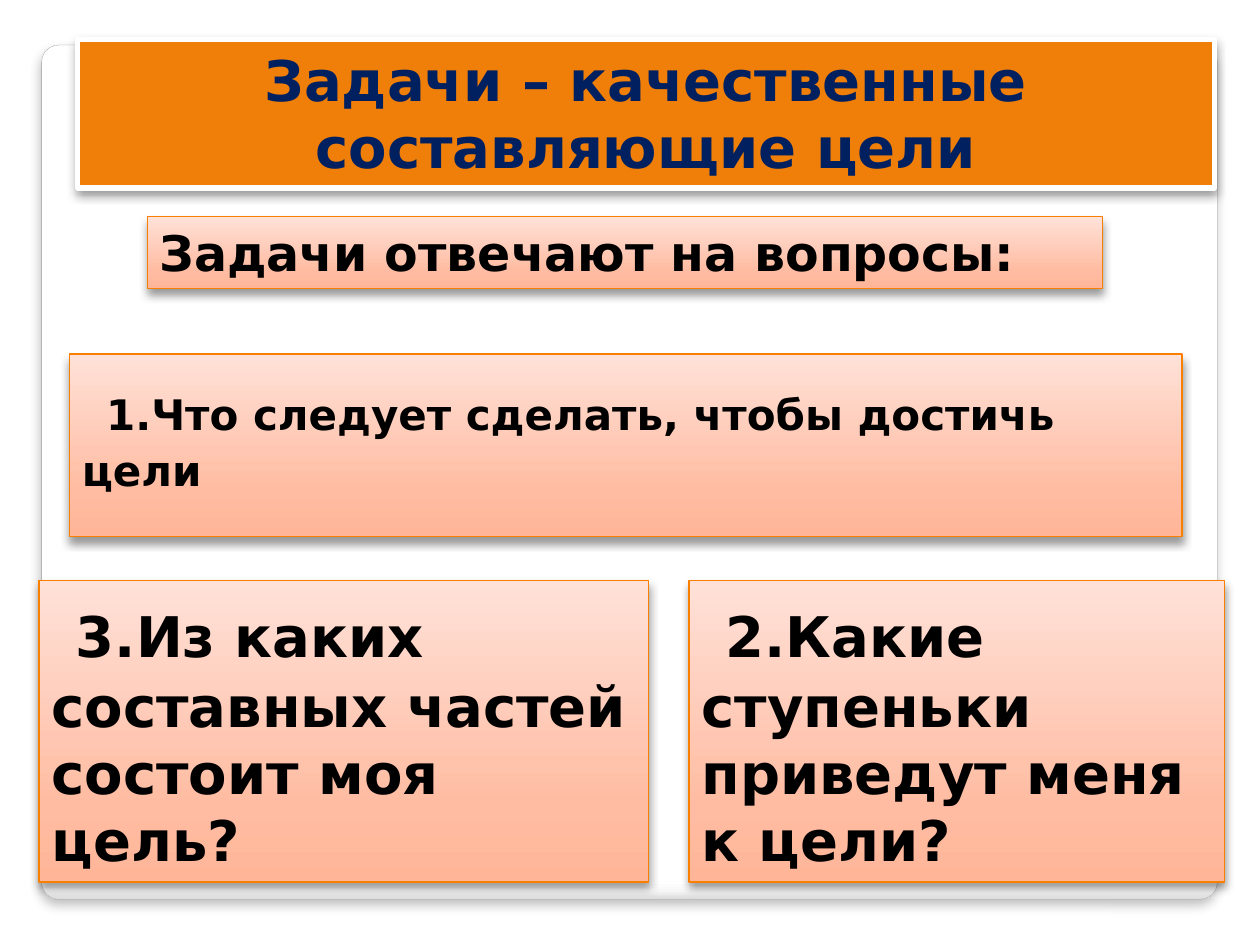
from lxml import etree
from pptx import Presentation
from pptx.dml.color import RGBColor
from pptx.enum import shapes, text
from pptx.oxml.ns import qn
from pptx.util import Cm, Pt

ORANGE = RGBColor(0xF0, 0x7F, 0x09)
BORDER = RGBColor(0xF9, 0x7F, 0x00)
NAVY = RGBColor(0x00, 0x20, 0x60)
BLACK = RGBColor(0x00, 0x00, 0x00)
WHITE = RGBColor(0xFF, 0xFF, 0xFF)
LIGHT_GREY = RGBColor(0xF7, 0xF7, 0xF7)
GREY = RGBColor(0xDA, 0xDA, 0xDA)
EDGE_GREY = RGBColor(0xA4, 0xA4, 0xA4)
PEACH = [(0, RGBColor(0xFF, 0xB5, 0x98)),
         (25, RGBColor(0xFF, 0xBC, 0xA2)),
         (100, RGBColor(0xFF, 0xE1, 0xD8))]
SHEET = [(0, WHITE), (98, WHITE), (99, LIGHT_GREY), (100, GREY)]


def paint(shape, fill, line, line_width, angle=90, opacity=40, blur=5.2, distance=3):
    """Set fill (a colour, or a list of gradient stops), outline and downward shadow."""
    if isinstance(fill, RGBColor):
        shape.fill.solid()
        shape.fill.fore_color.rgb = fill
    else:
        shape.fill.gradient()
        shape.fill.gradient_angle = angle
        stops = shape.element.spPr.find(".//" + qn("a:gsLst"))
        for old_stop in list(stops):
            stops.remove(old_stop)
        for position, colour in fill:
            stop = etree.SubElement(stops, qn("a:gs"), pos=str(position * 1000))
            etree.SubElement(stop, qn("a:srgbClr"), val=str(colour))
    shape.line.color.rgb = line
    shape.line.width = Pt(line_width)

    shape.shadow.inherit = False
    effects = shape.element.spPr.find(qn("a:effectLst"))
    shadow = etree.SubElement(effects, qn("a:outerShdw"), blurRad=str(Pt(blur)),
                              dist=str(Pt(distance)), dir="5400000", rotWithShape="0")
    shade = etree.SubElement(shadow, qn("a:srgbClr"), val=str(BLACK))
    etree.SubElement(shade, qn("a:alpha"), val=str(opacity * 1000))


def add_panel(words, left, top, width, height, size, colour=BLACK, indent_size=None,
              align=text.PP_ALIGN.LEFT, fill=PEACH, line=BORDER, line_width=0.75):
    """Add a text panel; indent_size is the size of a leading space, if there is one."""
    panel = slide.shapes.add_shape(shapes.MSO_SHAPE.RECTANGLE,
                                   Cm(left), Cm(top), Cm(width), Cm(height))
    paint(panel, fill, line, line_width)
    frame = panel.text_frame
    frame.word_wrap = True
    frame.vertical_anchor = text.MSO_ANCHOR.TOP
    paragraph = frame.paragraphs[0]
    paragraph.alignment = align
    pieces = [(words, size)]
    if indent_size:
        pieces.insert(0, (" ", indent_size))
    for piece, piece_size in pieces:
        run = paragraph.add_run()
        run.text = piece
        run.font.name = "DejaVu Sans"
        run.font.size = Pt(piece_size)
        run.font.bold = True
        run.font.color.rgb = colour


prs = Presentation()
prs.slide_width, prs.slide_height = Cm(25.4), Cm(19.05)
slide = prs.slides.add_slide(prs.slide_layouts[6])

sheet = slide.shapes.add_shape(shapes.MSO_SHAPE.ROUNDED_RECTANGLE,
                               Cm(0.84), Cm(0.91), Cm(23.7), Cm(17.22))
sheet.adjustments[0] = 0.02
paint(sheet, SHEET, EDGE_GREY, 0.16, angle=270, opacity=25, blur=6, distance=4)

add_panel("Задачи – качественные составляющие цели", 1.57, 0.79, 22.91, 3, 32,
          colour=NAVY, align=text.PP_ALIGN.CENTER, fill=ORANGE, line=WHITE, line_width=3)
add_panel("Задачи отвечают на вопросы:", 2.97, 4.37, 19.25, 1.45, 28)

questions = [
    ("1.Что следует сделать, чтобы достичь цели", 1.4, 7.14, 22.43, 3.68, 24),
    ("2.Какие ступеньки приведут меня к цели?", 13.89, 11.71, 10.8, 6.07, 32),
    ("3.Из каких составных частей состоит моя цель?", 0.79, 11.71, 12.29, 6.07, 32),
]
for question in questions:
    add_panel(*question, indent_size=40)

prs.save("out.pptx")
